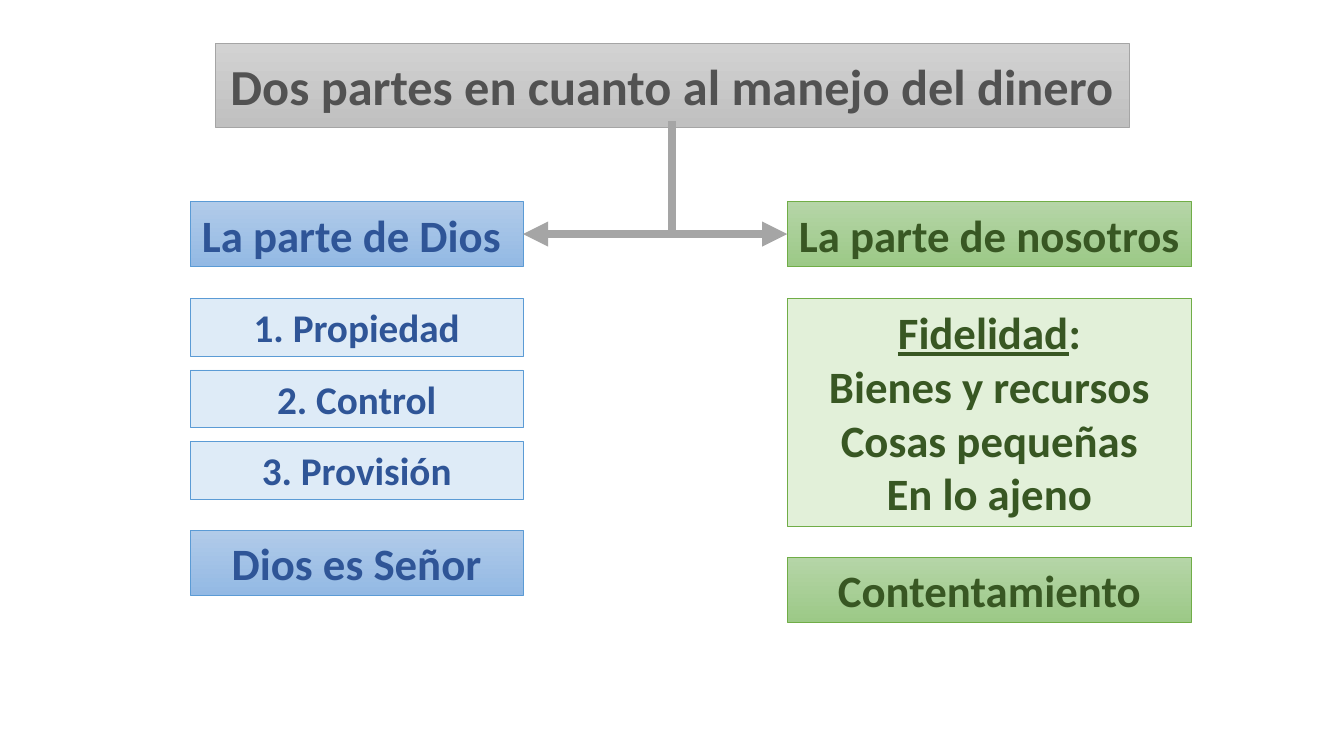
"""Build a slide on the two parts of managing money: God's part and ours."""
from lxml.etree import SubElement
from pptx import Presentation
from pptx.dml.color import RGBColor
from pptx.enum.shapes import MSO_CONNECTOR, MSO_SHAPE
from pptx.enum.text import MSO_ANCHOR, MSO_AUTO_SIZE, PP_ALIGN
from pptx.oxml.ns import qn
from pptx.util import Pt


def color(value):
    return RGBColor.from_string(value)


def format_box(shape, text, size, text_color, line_color, fills, wrap=True):
    if len(fills) == 2:
        shape.fill.gradient()
        shape.fill.gradient_angle = 270
        for stop, value in zip(shape.fill.gradient_stops, fills):
            stop.color.rgb = color(value)
    else:
        shape.fill.solid()
        shape.fill.fore_color.rgb = color(fills[0])
    shape.line.color.rgb = color(line_color)
    shape.line.width = Pt(0.5)
    frame = shape.text_frame
    frame.text = text
    frame.word_wrap = wrap
    frame.auto_size = MSO_AUTO_SIZE.SHAPE_TO_FIT_TEXT
    frame.vertical_anchor = MSO_ANCHOR.MIDDLE
    for paragraph in frame.paragraphs:
        paragraph.alignment = PP_ALIGN.CENTER
        paragraph.font.name = "Calibri"
        paragraph.font.size = Pt(size)
        paragraph.font.bold = True
        paragraph.font.color.rgb = color(text_color)


presentation = Presentation()
presentation.slide_width = Pt(960)
presentation.slide_height = Pt(540)
slide = presentation.slides.add_slide(presentation.slide_layouts[5])

title = slide.shapes.title
title.left, title.top, title.width, title.height = Pt(154), Pt(35.4), Pt(652.4), Pt(51)
format_box(title, "Dos partes en cuanto al manejo del dinero", 36,
           "525252", "A5A5A5", ["D2D2D2", "C0C0C0"], wrap=False)

header_top, header_height = 144, 46.4
list_top, item_height, item_pitch = 213.2, 41.2, 51
fidelity = "Fidelidad:\nBienes y recursos\nCosas pequeñas\nEn lo ajeno"
columns = [
    (136, 237.6, "2F5597", "5B9BD5", ["B1CBE9", "93B9E4"], ["DEEBF7"], [
        ("La parte de Dios ", header_top, header_height, 32),
        ("1. Propiedad", list_top, item_height, 28),
        ("2. Control", list_top + item_pitch, item_height, 28),
        ("3. Provisión", list_top + 2 * item_pitch, item_height, 28),
        ("Dios es Señor", 378.8, header_height, 32)]),
    (562.4, 288.8, "385723", "70AD47", ["B5D5A7", "9CC987"], ["E2F0D9"], [
        ("La parte de nosotros", header_top, header_height, 32),
        (fidelity, list_top, 162.6, 32),
        ("Contentamiento", 398.2, header_height, 32)]),
]
boxes = {}
for left, width, text_color, line_color, gradient, tint, rows in columns:
    for text, top, height, size in rows:
        box = slide.shapes.add_shape(MSO_SHAPE.RECTANGLE, Pt(left), Pt(top), Pt(width), Pt(height))
        box.shadow.inherit = False
        fills = gradient if height == header_height else tint
        format_box(box, text, size, text_color, line_color, fills, wrap=top != header_top)
        boxes[text] = box

heading = boxes[fidelity].text_frame.paragraphs[0]
heading.runs[0].text = "Fidelidad"
heading.runs[0].font.underline = True
heading.add_run().text = ":"

center, junction = 480.2, header_top + header_height / 2
connections = [
    (center, title, 2, False),
    (center, boxes["La parte de Dios "], 3, True),
    (center - 5.6, boxes["La parte de nosotros"], 1, True),
]
for start, shape, side, has_arrow in connections:
    connector = slide.shapes.add_connector(
        MSO_CONNECTOR.STRAIGHT, Pt(start), Pt(junction), Pt(center), Pt(junction))
    connector.end_connect(shape, side)
    connector.line.color.rgb = color("A5A5A5")
    connector.line.width = Pt(6)
    if has_arrow:
        SubElement(connector.line._get_or_add_ln(), qn("a:tailEnd"), type="triangle")
    SubElement(connector._element.spPr, qn("a:effectLst"))

presentation.save("out.pptx")
